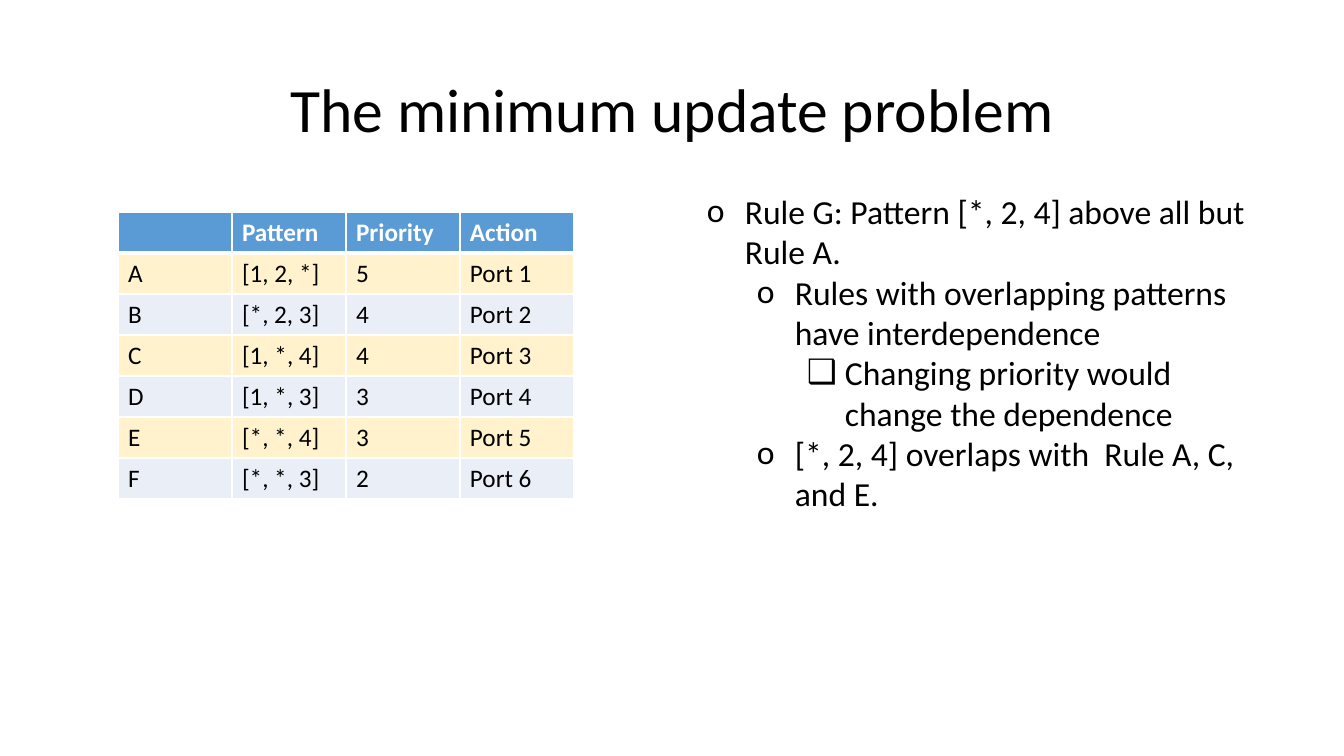
from lxml import etree
from pptx import Presentation
from pptx.dml.color import RGBColor
from pptx.enum.text import MSO_ANCHOR, PP_ALIGN
from pptx.oxml.ns import qn
from pptx.util import Emu, Pt

CENTER, LEFT = PP_ALIGN.CENTER, PP_ALIGN.LEFT
TOP, MIDDLE = MSO_ANCHOR.TOP, MSO_ANCHOR.MIDDLE

BLACK = RGBColor(0x00, 0x00, 0x00)
WHITE = RGBColor(0xFF, 0xFF, 0xFF)
BLUE = RGBColor(0x5B, 0x9B, 0xD5)
CREAM = RGBColor(0xFF, 0xF2, 0xCC)
PALE_BLUE = RGBColor(0xEA, 0xEF, 0xF7)

RULES = [
    ("", "Pattern", "Priority", "Action"),
    ("A", "[1, 2, *]", "5", "Port 1"),
    ("B", "[*, 2, 3]", "4", "Port 2"),
    ("C", "[1, *, 4]", "4", "Port 3"),
    ("D", "[1, *, 3]", "3", "Port 4"),
    ("E", "[*, *, 4]", "3", "Port 5"),
    ("F", "[*, *, 3]", "2", "Port 6"),
]

# Level, bullet, text
POINTS = [
    (1, "o", "Rule G: Pattern [*, 2, 4] above all but Rule A."),
    (2, "o", "Rules with overlapping patterns have interdependence"),
    (3, "❑", "Changing priority would change the dependence"),
    (2, "o", "[*, 2, 4] overlaps with  Rule A, C, and E."),
]


def px(length):
    return Emu(round(length * 914400 / 100.8))


def write(paragraph, text, size=18, color=BLACK, bold=False, align=LEFT,
          font="Calibri", spacing=1.0):
    paragraph.alignment = align
    paragraph.line_spacing = spacing
    if text:
        run = paragraph.add_run()
        run.text = text
        run.font.name = font
        run.font.size = Pt(size)
        run.font.bold = bold
        run.font.color.rgb = color


class SlideBuilder:
    indent_start, indent_step, hanging = 88, 50, 38

    def __init__(self, presentation):
        self.slide = presentation.slides.add_slide(presentation.slide_layouts[6])

    def text_frame(self, left, top, width, height, anchor=TOP):
        shape = self.slide.shapes.add_textbox(px(left), px(top), px(width), px(height))
        shape.text_frame.word_wrap = True
        shape.text_frame.vertical_anchor = anchor
        return shape.text_frame

    def title(self, text, *place):
        frame = self.text_frame(*place, anchor=MIDDLE)
        write(frame.paragraphs[0], text, size=44, align=CENTER, spacing=0.9)

    def bullets(self, points, *place):
        frame = self.text_frame(*place)
        for index, (level, bullet, text) in enumerate(points):
            paragraph = frame.add_paragraph() if index else frame.paragraphs[0]
            paragraph.level = level
            write(paragraph, text, size=24)
            properties = paragraph._p.get_or_add_pPr()
            margin = self.indent_start + self.indent_step * (level - 1)
            properties.set("marL", str(px(margin)))
            properties.set("indent", str(px(-self.hanging)))
            etree.SubElement(properties, qn("a:buFont"), typeface="Calibri")
            etree.SubElement(properties, qn("a:buChar"), char=bullet)

    def borders(self, cell, top=1, bottom=1):
        properties = cell._tc.get_or_add_tcPr()
        for side, width in (("L", 1), ("R", 1), ("T", top), ("B", bottom)):
            line = etree.SubElement(properties, qn(f"a:ln{side}"), w=str(Pt(width)))
            fill = etree.SubElement(line, qn("a:solidFill"))
            etree.SubElement(fill, qn("a:srgbClr"), val=str(WHITE))

    def table(self, rows, left, top, column_width, row_height):
        table = self.slide.shapes.add_table(
            len(rows), len(rows[0]), px(left), px(top),
            px(column_width * len(rows[0])), px(row_height * len(rows))).table
        table.first_row = table.horz_banding = False
        for column in table.columns:
            column.width = px(column_width)
        for row_index, values in enumerate(rows):
            header = row_index == 0
            band = CREAM if row_index % 2 else PALE_BLUE
            table.rows[row_index].height = px(row_height)
            for column_index, text in enumerate(values):
                cell = table.cell(row_index, column_index)
                # The rule under the header is thicker
                self.borders(cell, top=3 if row_index == 1 else 1,
                             bottom=3 if header else 1)
                cell.fill.solid()
                cell.fill.fore_color.rgb = BLUE if header else band
                write(cell.text_frame.paragraphs[0], text, bold=header,
                      color=WHITE if header else BLACK)


def main():
    presentation = Presentation()
    presentation.slide_width, presentation.slide_height = px(1344), px(756)
    builder = SlideBuilder(presentation)

    # Title
    builder.title("The minimum update problem", 93, 40, 1159, 146)
    # Rule table
    builder.table(RULES, left=118, top=212, column_width=114, row_height=41)
    # Explanation
    builder.bullets(POINTS, 647, 186, 630, 437)

    presentation.save("out.pptx")


if __name__ == "__main__":
    main()
